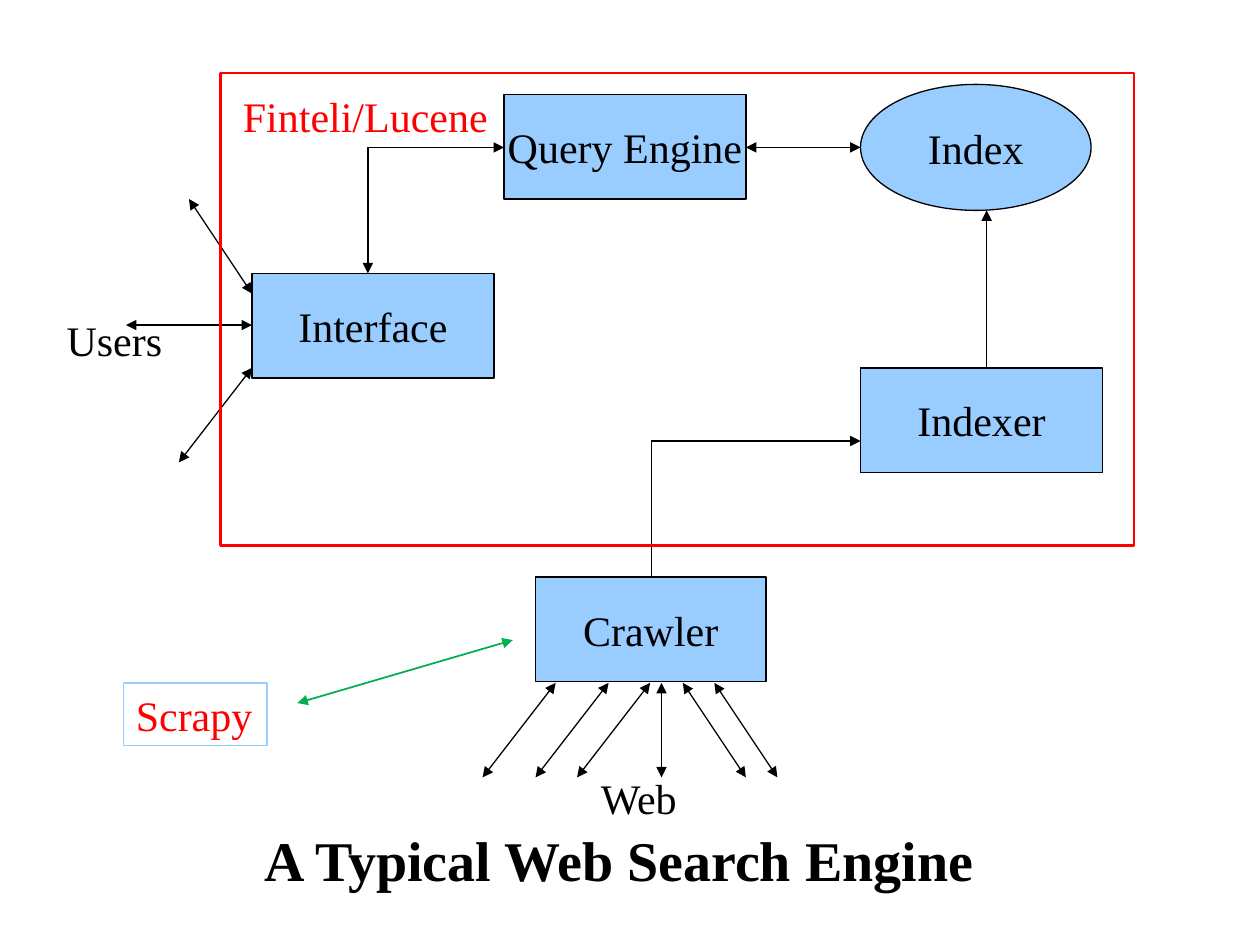
from lxml.etree import SubElement
from pptx import Presentation
from pptx.dml.color import RGBColor
from pptx.enum.shapes import MSO_CONNECTOR, MSO_SHAPE
from pptx.enum.text import MSO_ANCHOR, MSO_AUTO_SIZE, PP_ALIGN
from pptx.oxml.ns import qn
from pptx.util import Inches, Pt

BLACK = RGBColor(0x00, 0x00, 0x00)
LIGHT_BLUE = RGBColor(0x99, 0xCC, 0xFF)
RED = RGBColor(0xFF, 0x00, 0x00)
GREEN = RGBColor(0x00, 0xB0, 0x50)

TITLE_ONLY = 5
BOTH_ENDS = ("headEnd", "tailEnd")
END_ONLY = ("tailEnd",)

# Components: text, preset, left, top, width, height
COMPONENTS = [
    ("Interface", MSO_SHAPE.RECTANGLE, 2, 2.17, 1.92, 0.83),
    ("Query Engine", MSO_SHAPE.RECTANGLE, 4, 0.75, 1.92, 0.83),
    ("Indexer", MSO_SHAPE.RECTANGLE, 6.83, 2.92, 1.92, 0.83),
    ("Index", MSO_SHAPE.OVAL, 6.83, 0.67, 1.83, 1),
    ("Crawler", MSO_SHAPE.RECTANGLE, 4.25, 4.58, 1.83, 0.83),
]

# Links between components: start, end, arrowheads
LINKS = [
    ((5.17, 4.58), (5.17, 3.5), ()),
    ((5.17, 3.5), (6.83, 3.5), END_ONLY),
    ((7.83, 2.92), (7.83, 1.67), END_ONLY),
    ((5.92, 1.17), (6.83, 1.17), BOTH_ENDS),
    ((2.92, 1.17), (4, 1.17), END_ONLY),
    ((2.92, 1.17), (2.92, 2.17), END_ONLY),
    ((2, 2.92), (1.42, 3.67), BOTH_ENDS),
    ((1.5, 1.58), (2, 2.33), BOTH_ENDS),
    ((2, 2.58), (1, 2.58), BOTH_ENDS),
]

# Crawler arrows to the web: x at the crawler, horizontal shift to the web
CRAWLS = [(4.41, -0.58), (4.83, -0.58), (5.16, -0.58),
          (5.25, 0), (5.42, 0.5), (5.67, 0.5)]


def write_text(shape, text, color=BLACK, size=24, bold=False,
               align=PP_ALIGN.LEFT, anchor=MSO_ANCHOR.TOP):
    frame = shape.text_frame
    frame.text = text
    frame_format = {"word_wrap": False, "vertical_anchor": anchor,
                    "auto_size": MSO_AUTO_SIZE.NONE}
    for name, value in frame_format.items():
        setattr(frame, name, value)
    paragraph = frame.paragraphs[0]
    paragraph.alignment = align
    font = paragraph.runs[0].font
    font_format = {"name": "Times New Roman", "size": Pt(size), "bold": bold}
    for name, value in font_format.items():
        setattr(font, name, value)
    font.color.rgb = color


def add_box(shapes, preset, box, line_color, line_width=0.75, fill=None):
    shape = shapes.add_shape(preset, *map(Inches, box))
    shape.shadow.inherit = False
    if fill is None:
        shape.fill.background()
    else:
        shape.fill.solid()
        shape.fill.fore_color.rgb = fill
    shape.line.color.rgb = line_color
    shape.line.width = Pt(line_width)
    return shape


def add_label(shapes, text, box, color=BLACK):
    write_text(shapes.add_textbox(*map(Inches, box)), text, color)


def add_arrow(shapes, start, end, heads, color=BLACK, width=0.75):
    connector = shapes.add_connector(
        MSO_CONNECTOR.STRAIGHT, *map(Inches, start + end))
    connector.line.color.rgb = color
    connector.line.width = Pt(width)
    properties = connector._element.spPr
    line = properties.find(qn("a:ln"))
    for head in heads:
        SubElement(line, qn(f"a:{head}"), type="triangle")
    SubElement(properties, qn("a:effectLst"))


def add_title(slide, text, box):
    title = slide.shapes.title
    for name, value in zip(("left", "top", "width", "height"), box):
        setattr(title, name, Inches(value))
    write_text(title, text, size=32, bold=True)


def main():
    presentation = Presentation()
    presentation.slide_width = Inches(10)
    presentation.slide_height = Inches(7.5)
    slide = presentation.slides.add_slide(
        presentation.slide_layouts[TITLE_ONLY])
    shapes = slide.shapes

    add_title(slide, "A Typical Web Search Engine", (2, 6.5, 5.93, 0.63))

    # Search engine components
    for text, preset, *box in COMPONENTS:
        component = add_box(shapes, preset, box, BLACK, fill=LIGHT_BLUE)
        write_text(component, text, align=PP_ALIGN.CENTER,
                   anchor=MSO_ANCHOR.MIDDLE)

    # Arrows
    for x, shift in CRAWLS:
        add_arrow(shapes, (x, 5.42), (x + shift, 6.17), BOTH_ENDS)
    for start, end, heads in LINKS:
        add_arrow(shapes, start, end, heads)

    # Outside world
    add_label(shapes, "Users", (0.43, 2.45, 0.96, 0.5))
    add_label(shapes, "Web", (4.67, 6.08, 0.83, 0.5))

    # Frame around the indexing and query software
    software = shapes.add_group_shape().shapes
    add_label(software, "Finteli/Lucene", (1.83, 0.67, 2.2, 0.51), RED)
    add_box(software, MSO_SHAPE.RECTANGLE, (1.75, 0.58, 7.25, 3.75), RED, 1.5)

    # Crawling software
    scrapy = add_box(shapes, MSO_SHAPE.RECTANGLE, (0.98, 5.42, 1.14, 0.5),
                     LIGHT_BLUE)
    write_text(scrapy, "Scrapy", RED)
    add_arrow(shapes, (4.07, 5.08), (2.36, 5.58), BOTH_ENDS, GREEN, 1)

    presentation.save("out.pptx")


if __name__ == "__main__":
    main()
